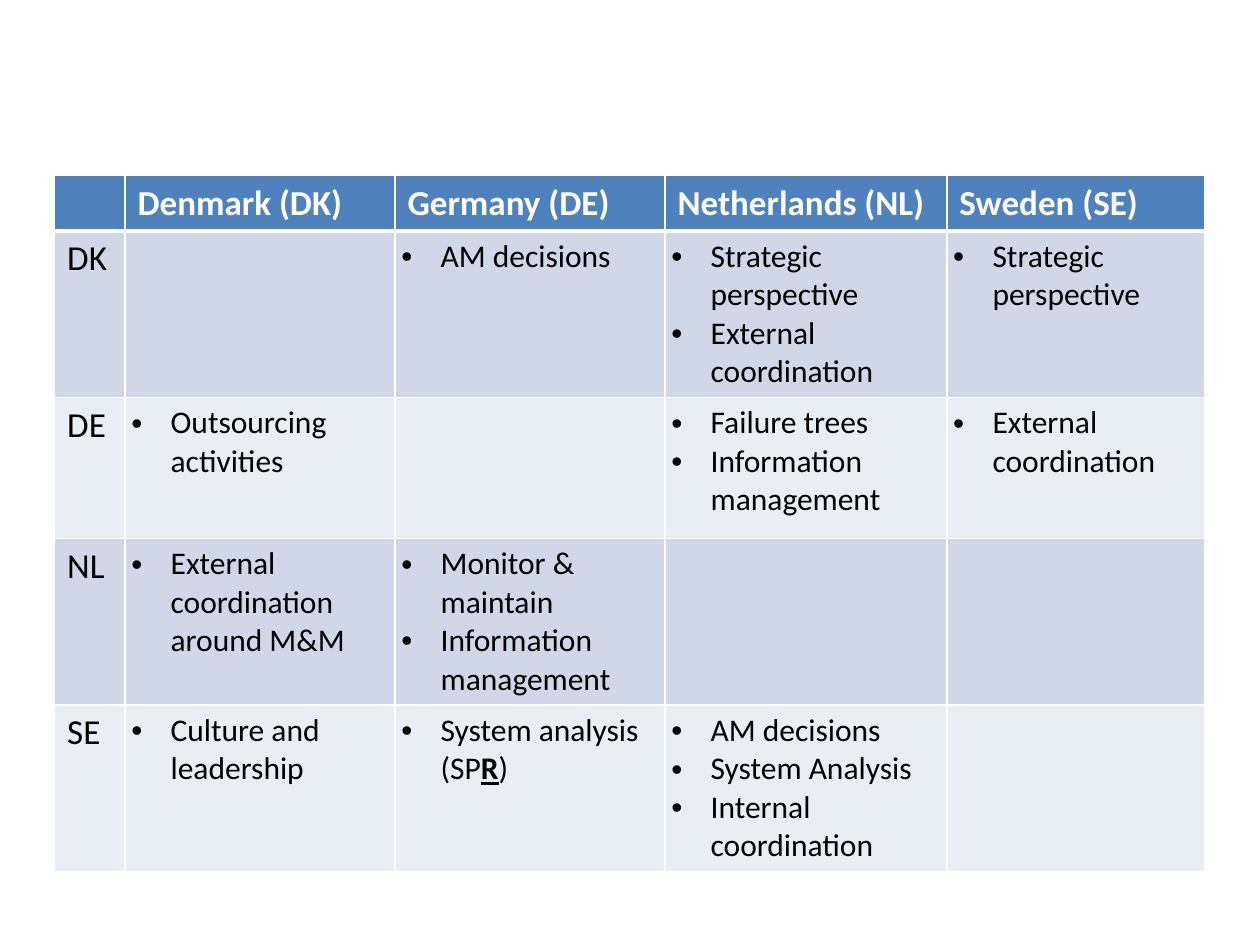
import pptx
import pptx.dml.color
import pptx.oxml
import pptx.oxml.ns
import pptx.util
from lxml import etree

Pt = pptx.util.Pt
qn = pptx.oxml.ns.qn

FONT = "Calibri"
WHITE, BLACK, BLUE = "FFFFFF", "000000", "4F81BD"
BANDS = ["D0D8E8", "E9EDF4"]

COL_WIDTHS = [40.2, 154.3, 154.3, 161.1, 147.5]
ROW_HEIGHTS = [30.8, 95.2, 80.6, 95.2, 95.2]

HEADERS = ["", "Denmark (DK)", "Germany (DE)", "Netherlands (NL)", "Sweden (SE)"]
# Each cell is a list of bullets; a bullet is a text or a list of (text, marked) runs
ROWS = [
    ("DK", [[], ["AM decisions"],
            ["Strategic perspective", "External coordination"],
            ["Strategic perspective"]]),
    ("DE", [["Outsourcing activities"], [],
            ["Failure trees", "Information management"],
            ["External coordination"]]),
    ("NL", [["External coordination around M&M"],
            ["Monitor & maintain", "Information management"], [], []]),
    ("SE", [["Culture and leadership"],
            [[("System analysis (SP", False), ("R", True), (")", False)]],
            ["AM decisions", "System Analysis", "Internal coordination"], []]),
]


def rgb(color):
    return pptx.dml.color.RGBColor.from_string(color)


def add_text(p, text, size=20, color=BLACK, bold=False, underline=False):
    r = p.add_run()
    r.text = text
    r.font.name = FONT
    r.font.size = Pt(size)
    r.font.color.rgb = rgb(color)
    r.font.bold = bold
    r.font.underline = underline


def style_cell(cell, fill, top=1, bottom=1):
    cell.fill.solid()
    cell.fill.fore_color.rgb = rgb(fill)
    tc_pr = cell._tc.get_or_add_tcPr()
    # Borders must come before the fill
    for i, (side, width) in enumerate(zip("LRTB", (1, 1, top, bottom))):
        ln = etree.Element(qn(f"a:ln{side}"), w=str(Pt(width)))
        solid = etree.SubElement(ln, qn("a:solidFill"))
        etree.SubElement(solid, qn("a:srgbClr"), val=WHITE)
        tc_pr.insert(i, ln)


def add_bullets(cell, bullets):
    cell.margin_left = cell.margin_top = cell.margin_bottom = Pt(3.6)
    cell.margin_right = Pt(0)
    tf = cell.text_frame
    for i, bullet in enumerate(bullets):
        p = tf.add_paragraph() if i else tf.paragraphs[0]
        p_pr = p._p.get_or_add_pPr()
        p_pr.set("marL", str(Pt(22.5)))
        p_pr.set("indent", str(-Pt(22.5)))
        etree.SubElement(p_pr, qn("a:buFont"), typeface="Arial")
        etree.SubElement(p_pr, qn("a:buChar"), char="•")
        runs = [(bullet, False)] if isinstance(bullet, str) else bullet
        for text, marked in runs:
            add_text(p, text, size=18, bold=marked, underline=marked)


def add_country_table(s, left, top):
    frame = s.shapes.add_table(len(ROW_HEIGHTS), len(COL_WIDTHS), Pt(left), Pt(top),
                               Pt(sum(COL_WIDTHS)), Pt(sum(ROW_HEIGHTS)))
    table = frame.table
    for col, width in zip(table.columns, COL_WIDTHS):
        col.width = Pt(width)
    for row, height in zip(table.rows, ROW_HEIGHTS):
        row.height = Pt(height)

    # Header row
    for c, text in enumerate(HEADERS):
        cell = table.cell(0, c)
        style_cell(cell, BLUE, bottom=3)
        if text:
            add_text(cell.text_frame.paragraphs[0], text, color=WHITE, bold=True)

    # Banded country rows
    for r, (country, entries) in enumerate(ROWS, start=1):
        for c in range(len(COL_WIDTHS)):
            style_cell(table.cell(r, c), BANDS[(r - 1) % 2], top=3 if r == 1 else 1)
        add_text(table.cell(r, 0).text_frame.paragraphs[0], country)
        for c, bullets in enumerate(entries, start=1):
            if bullets:
                add_bullets(table.cell(r, c), bullets)


def main():
    prs = pptx.Presentation()
    prs.slide_width, prs.slide_height = Pt(720), Pt(540)
    s = prs.slides.add_slide(prs.slide_layouts[6])
    add_country_table(s, left=31.2, top=100.3)
    prs.save("out.pptx")


if __name__ == "__main__":
    main()
